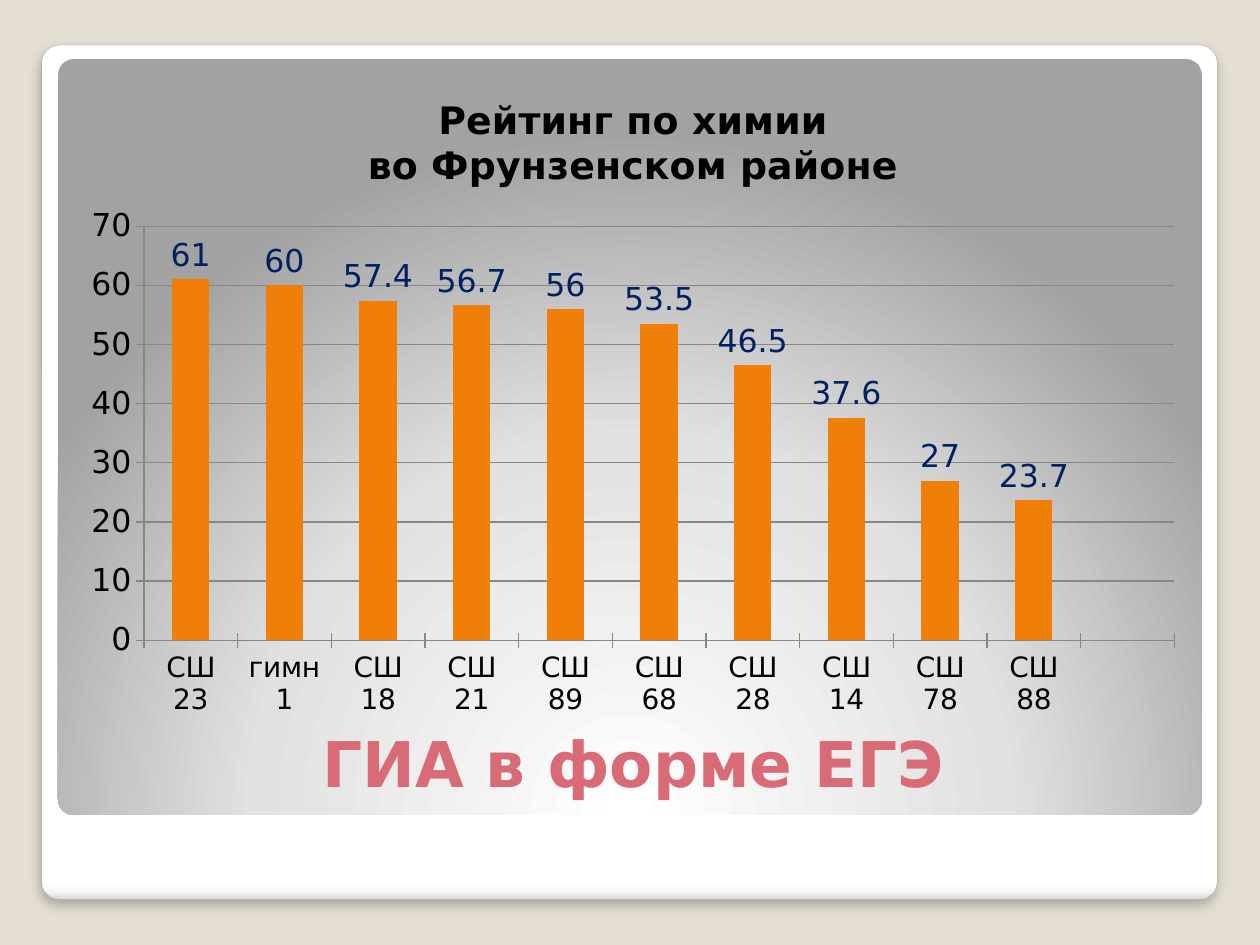
from lxml.etree import SubElement
from pptx import Presentation
from pptx.chart.data import CategoryChartData
from pptx.dml.color import RGBColor
from pptx.enum.chart import XL_CHART_TYPE, XL_LABEL_POSITION, XL_TICK_MARK
from pptx.enum.shapes import MSO_SHAPE
from pptx.enum.text import MSO_ANCHOR, PP_ALIGN
from pptx.oxml import parse_xml
from pptx.oxml.ns import nsdecls, qn
from pptx.util import Cm, Pt

FONT = "DejaVu Sans"
SCORES = [("СШ 23", 61), ("гимн 1", 60), ("СШ 18", 57.4), ("СШ 21", 56.7),
          ("СШ 89", 56), ("СШ 68", 53.5), ("СШ 28", 46.5), ("СШ 14", 37.6),
          ("СШ 78", 27), ("СШ 88", 23.7), ("", None)]


def rgb(value):
    return RGBColor.from_string(value)


def set_font(font, size, color, bold=False):
    font.name, font.size, font.bold = FONT, Pt(size), bold
    font.color.rgb = rgb(color)


def set_gradient(sp, stops, direction):
    sp.fill.background()
    gs = "".join(f'<a:gs pos="{pos * 1000}"><a:srgbClr val="{color}"/></a:gs>'
                 for pos, color in stops)
    grad = parse_xml(f'<a:gradFill {nsdecls("a")} rotWithShape="1">'
                     f'<a:gsLst>{gs}</a:gsLst>{direction}</a:gradFill>')
    no_fill = sp._element.spPr.find(qn("a:noFill"))
    sp._element.spPr.replace(no_fill, grad)


def add_panel(s, x, y, w, h, stops, direction):
    sp = s.shapes.add_shape(MSO_SHAPE.ROUNDED_RECTANGLE, Cm(x), Cm(y), Cm(w), Cm(h))
    sp.adjustments[0] = 0.021
    sp.line.fill.background()
    sp.shadow.inherit = False
    set_gradient(sp, stops, direction)
    return sp


def add_frame(s, x, y, w, h):
    sp = add_panel(s, x, y, w, h,
                   [(0, "FFFFFF"), (98, "FFFFFF"), (99, "F7F7F7"), (100, "DADADA")],
                   '<a:lin ang="5400000" scaled="0"/>')
    sp.line.color.rgb = rgb("A4A4A4")
    sp.line.width = Pt(0.16)
    effects = sp._element.spPr.find(qn("a:effectLst"))
    effects.append(parse_xml(
        f'<a:outerShdw {nsdecls("a")} blurRad="{Pt(6)}" dist="{Pt(4)}" dir="5400000" '
        'algn="t" rotWithShape="0"><a:srgbClr val="000000"><a:alpha val="25000"/>'
        '</a:srgbClr></a:outerShdw>'))
    add_panel(s, x + 0.33, y + 0.28, w - 0.64, h - 1.98,
              [(0, "FFFFFF"), (55, "E1E1E1"), (100, "A2A2A2")],
              '<a:path path="circle">'
              '<a:fillToRect l="50000" t="175000" r="50000" b="-75000"/></a:path>')


def add_title(s, x, y, w, h):
    tf = s.shapes.add_textbox(Cm(x), Cm(y), Cm(w), Cm(h)).text_frame
    tf.word_wrap = True
    tf.vertical_anchor = MSO_ANCHOR.BOTTOM
    p = tf.paragraphs[0]
    p.alignment = PP_ALIGN.CENTER
    r = p.add_run()
    r.text = "ГИА в форме ЕГЭ"
    set_font(r.font, 36, "D96B77", True)


def add_rating(s, x, y, w, h):
    data = CategoryChartData()
    data.categories = [name for name, score in SCORES]
    data.add_series("Series 1", [score for name, score in SCORES])
    chart = s.shapes.add_chart(XL_CHART_TYPE.COLUMN_CLUSTERED,
                               Cm(x), Cm(y), Cm(w), Cm(h), data).chart
    set_font(chart.font, 18, "000000")
    chart.has_legend = False
    chart.has_title = True
    tf = chart.chart_title.text_frame
    for i, line in enumerate(["Рейтинг по химии", "во Фрунзенском районе"]):
        p = tf.add_paragraph() if i else tf.paragraphs[0]
        r = p.add_run()
        r.text = line
        set_font(r.font, 21.6, "000000", True)

    plot = chart.plots[0]
    plot.gap_width = 150
    plot.vary_by_categories = False
    bars = plot.series[0]
    bars.format.fill.solid()
    bars.format.fill.fore_color.rgb = rgb("F07F09")
    labels = bars.data_labels
    labels.show_value = True
    labels.position = XL_LABEL_POSITION.OUTSIDE_END
    set_font(labels.font, 18, "002060")

    values = chart.value_axis
    values.minimum_scale, values.maximum_scale, values.major_unit = 0, 70, 10
    values.has_major_gridlines = True
    values.major_gridlines.format.line.color.rgb = rgb("878787")
    for axis, size in ((chart.category_axis, 16), (values, 18)):
        set_font(axis.tick_labels.font, size, "000000")
        axis.major_tick_mark = XL_TICK_MARK.CROSS
        axis.format.line.color.rgb = rgb("878787")
    set_plot_area(chart)


def set_plot_area(chart):
    space = chart._chartSpace
    area = space.chart.plotArea
    for old in area.findall(qn("c:layout")):
        area.remove(old)
    sizes = (("x", 0.066), ("y", 0.234), ("w", 0.914), ("h", 0.632))
    parts = "".join(f'<c:{key} val="{val}"/>' for key, val in sizes)
    area.insert(0, parse_xml(
        f'<c:layout {nsdecls("c")}><c:manualLayout><c:layoutTarget val="inner"/>'
        f'<c:xMode val="edge"/><c:yMode val="edge"/>{parts}'
        '</c:manualLayout></c:layout>'))
    SubElement(SubElement(area, qn("c:spPr")), qn("a:noFill"))
    space.chart.addnext(parse_xml(
        f'<c:spPr {nsdecls("c", "a")}><a:noFill/><a:ln><a:noFill/></a:ln></c:spPr>'))


def main():
    prs = Presentation()
    prs.slide_width, prs.slide_height = Cm(25.4), Cm(19.05)
    s = prs.slides.add_slide(prs.slide_layouts[6])
    s.background.fill.solid()
    s.background.fill.fore_color.rgb = rgb("E3DED1")
    add_frame(s, 0.84, 0.91, 23.7, 17.22)
    add_title(s, 1.4, 13.28, 22.73, 2.97)
    add_rating(s, 1.4, 1.47, 22.73, 13.21)
    prs.save("out.pptx")


if __name__ == "__main__":
    main()
